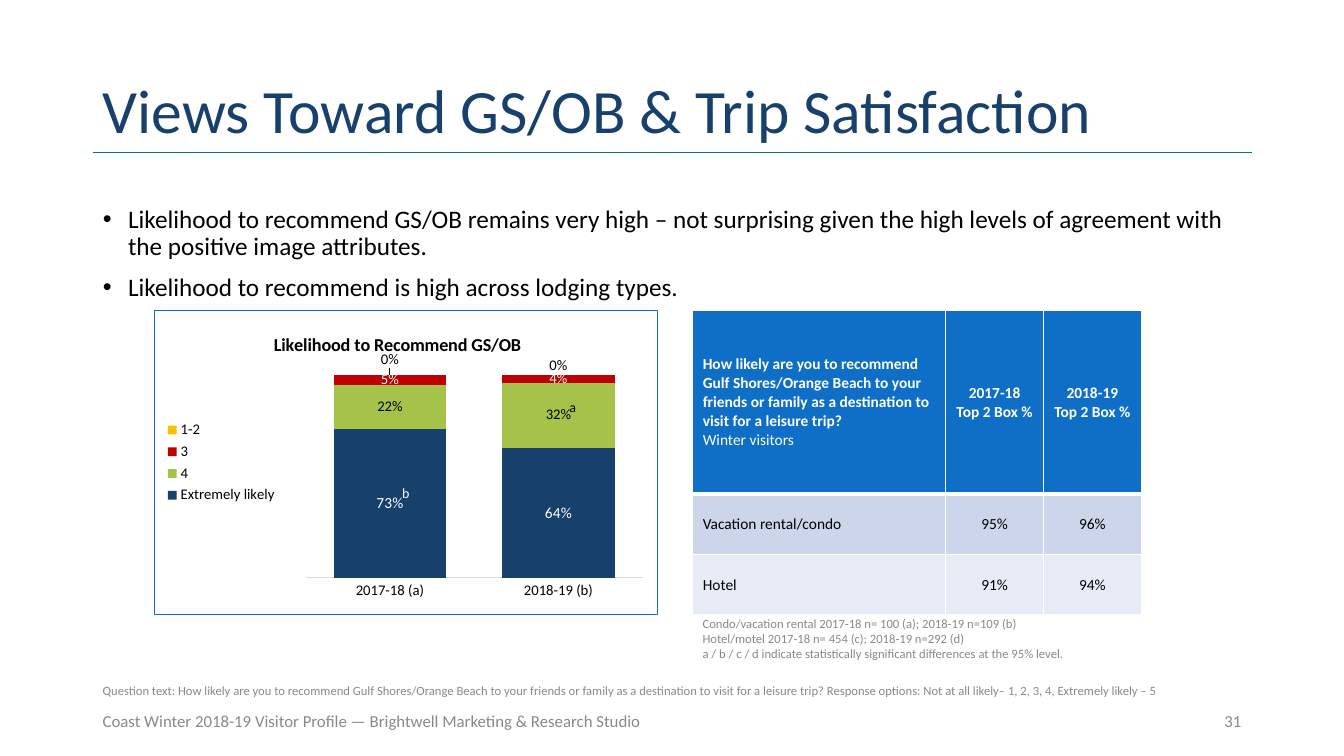
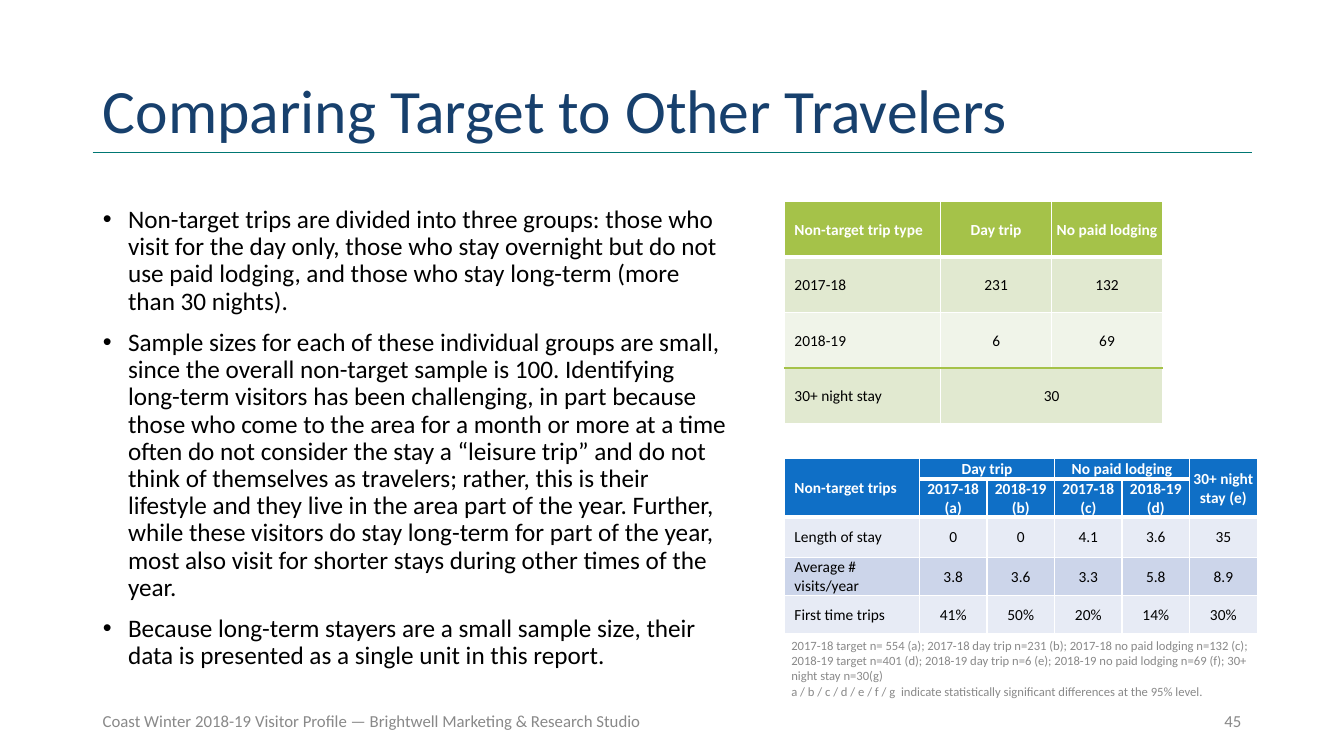
from lxml import etree
from pptx import Presentation
from pptx import util as u
from pptx.chart import data as cd
from pptx.dml.color import RGBColor
from pptx.enum import chart as ch, shapes, text as t
from pptx.oxml import parse_xml
from pptx.oxml.ns import nsdecls, qn

NAVY = RGBColor(0x17, 0x40, 0x6D)
BLUE = RGBColor(0x0F, 0x6F, 0xC6)
TEAL = RGBColor(0x00, 0x77, 0x73)
GREEN = RGBColor(0xA5, 0xC2, 0x49)
RED = RGBColor(0xC0, 0x00, 0x00)
GOLD = RGBColor(0xFF, 0xC0, 0x00)
BLACK = RGBColor(0, 0, 0)
WHITE = RGBColor(0xFF, 0xFF, 0xFF)
GREY = RGBColor(0x89, 0x89, 0x89)
RULE = RGBColor(0xD9, 0xD9, 0xD9)
ICE = RGBColor(0xE7, 0xEB, 0xF5)
SKY = RGBColor(0xCC, 0xD5, 0xEA)
SAGE = RGBColor(0xE1, 0xE9, 0xD0)
MINT = RGBColor(0xF0, 0xF4, 0xE9)
FONT = "Calibri"
LEFT, CENTER, RIGHT = t.PP_ALIGN.LEFT, t.PP_ALIGN.CENTER, t.PP_ALIGN.RIGHT
FOOTER = "Coast Winter 2018-19 Visitor Profile — Brightwell Marketing & Research Studio"


def write(frame, lines, size, color, bold=False, align=LEFT):
    """Fill a text frame, one paragraph a line."""
    frame.word_wrap = True
    for i, line in enumerate(lines):
        para = frame.paragraphs[0] if i == 0 else frame.add_paragraph()
        para.alignment = align
        run = para.add_run()
        run.text = line
        run.font.name, run.font.size = FONT, u.Pt(size)
        run.font.bold, run.font.color.rgb = bold, color


def grid(slide, left, top, cols, rows, cells, heads, fills, merges=(), rule=None):
    """Add a table; fills holds the header fill, then the two band fills."""
    frame = slide.shapes.add_table(len(rows), len(cols), u.Inches(left), u.Inches(top),
                                   u.Inches(sum(cols)), u.Inches(sum(rows)))
    table = frame.table
    for col, width in zip(table.columns, cols):
        col.width = u.Inches(width)
    for r, height in enumerate(rows):
        table.rows[r].height = u.Inches(height)
        head = r < heads
        for c, label in enumerate(cells[r]):
            cell = table.cell(r, c)
            cell.margin_left = u.Inches(0.01 if c else 0.1)
            cell.margin_right = cell.margin_top = u.Inches(0.01)
            cell.margin_bottom = 0
            cell.vertical_anchor = t.MSO_ANCHOR.MIDDLE
            props = cell._tc.get_or_add_tcPr()
            for side in "LRTB":
                width = 3 if head and side == "B" else 1
                ruled = rule is not None and (r, side) in ((rule, "T"), (rule - 1, "B"))
                props.append(parse_xml(
                    f'<a:ln{side} {nsdecls("a")} w="{u.Pt(width)}"><a:solidFill>'
                    f'<a:srgbClr val="{GREEN if ruled else WHITE}"/></a:solidFill></a:ln{side}>'))
            cell.fill.solid()
            cell.fill.fore_color.rgb = fills[0] if head else fills[1 + (r - heads) % 2]
            write(cell.text_frame, label.split("\n"), 11, WHITE if head else BLACK,
                  head, CENTER if c else LEFT)
    for r, c, last, end in merges:
        table.cell(r, c).merge(table.cell(last, end))
    return table


# Content: title, page, body height and width, bullets, notes (place, lines, size, colour)
pages = [
    ("Views Toward GS/OB & Trip Satisfaction", "31", 11.5, 1.66,
     ["Likelihood to recommend GS/OB remains very high – not surprising given the high levels "
      "of agreement with the positive image attributes.",
      "Likelihood to recommend is high across lodging types."],
     [((6.87, 6.06, 5, 0.56),
       ["Condo/vacation rental 2017-18 n= 100 (a); 2018-19 n=109 (b)",
        "Hotel/motel 2017-18 n= 454 (c); 2018-19 n=292 (d)",
        "a / b / c / d indicate statistically significant differences at the 95% level."], 9, GREY),
      ((0.92, 6.73, 10.95, 0.25),
       ["Question text: How likely are you to recommend Gulf Shores/Orange Beach to your friends "
        "or family as a destination to visit for a leisure trip? Response options: "
        "Not at all likely– 1, 2, 3, 4, Extremely likely – 5"], 9, GREY),
      ((5.55, 3.9, 0.27, 0.27), ["a"], 10, BLACK),
      ((3.89, 4.76, 0.28, 0.27), ["b"], 10, WHITE)]),
    ("Comparing Target to Other Travelers", "45", 6.42, 4.76,
     ["Non-target trips are divided into three groups: those who visit for the day only, those "
      "who stay overnight but do not use paid lodging, and those who stay long-term (more than "
      "30 nights).",
      "Sample sizes for each of these individual groups are small, since the overall non-target "
      "sample is 100. Identifying long-term visitors has been challenging, in part because those "
      "who come to the area for a month or more at a time often do not consider the stay a "
      "“leisure trip” and do not think of themselves as travelers; rather, this is their "
      "lifestyle and they live in the area part of the year. Further, while these visitors do "
      "stay long-term for part of the year, most also visit for shorter stays during other times "
      "of the year.",
      "Because long-term stayers are a small sample size, their data is presented as a single "
      "unit in this report."],
     [((7.75, 6.28, 4.78, 0.71),
       ["2017-18 target n= 554 (a); 2017-18 day trip n=231 (b); 2017-18 no paid lodging n=132 (c); "
        "2018-19 target n=401 (d); 2018-19 day trip n=6 (e); 2018-19 no paid lodging n=69 (f); "
        "30+ night stay n=30(g)",
        "a / b / c / d / e / f / g  indicate statistically significant differences at the 95% "
        "level."], 9, GREY)]),
]

deck = Presentation()
deck.slide_width, deck.slide_height = u.Inches(13.33), u.Inches(7.5)
slides = []

# Shared frame: title, rule, bullets, footer
for name, page, wide, high, points, notes in pages:
    slide = deck.slides.add_slide(deck.slide_layouts[1])
    slides.append(slide)
    title, body = slide.placeholders[0], slide.placeholders[1]
    for holder, box in ((title, (0.92, 0.4, 11.5, 1.45)), (body, (0.92, 2, wide, high))):
        holder.left, holder.top, holder.width, holder.height = map(u.Inches, box)
        holder.text_frame.auto_size = t.MSO_AUTO_SIZE.NONE
    title.text_frame.vertical_anchor = t.MSO_ANCHOR.MIDDLE
    write(title.text_frame, [name], 44, NAVY)
    title.text_frame.paragraphs[0].line_spacing = 0.9
    write(body.text_frame, points, 18, BLACK)
    for para in body.text_frame.paragraphs:
        para.line_spacing, para.space_before = 0.9, u.Pt(10)
        props = para._p.get_or_add_pPr()
        props.set("marL", str(u.Inches(0.25)))
        props.set("indent", str(u.Inches(-0.25)))

    line = slide.shapes.add_connector(shapes.MSO_CONNECTOR.STRAIGHT, u.Inches(0.92),
                                      u.Inches(1.51), u.Inches(12.42), u.Inches(1.51))
    line.line.color.rgb, line.line.width = TEAL, u.Pt(0.5)
    etree.SubElement(line._element.spPr, qn("a:effectLst"))

    for box, label, align in (((0.92, 6.95, 9.76, 0.4), FOOTER, LEFT),
                              ((10.79, 6.95, 1.62, 0.4), page, RIGHT)):
        foot = slide.shapes.add_textbox(*map(u.Inches, box)).text_frame
        foot.vertical_anchor = t.MSO_ANCHOR.MIDDLE
        write(foot, [label], 12, GREY, align=align)

# Slide 1: stacked chart
first, second = slides
data = cd.CategoryChartData(number_format="0%")
data.categories = ["2017-18 (a)", "2018-19 (b)"]
bars = [("Extremely likely", (0.73, 0.64), NAVY, WHITE, 11), ("4", (0.22, 0.32), GREEN, BLACK, 10.5),
        ("3", (0.05, 0.04), RED, WHITE, 10.5), ("1-2", (0, 0), GOLD, BLACK, 10.5)]
for name, vals, *_ in bars:
    data.add_series(name, vals)
chart = first.shapes.add_chart(ch.XL_CHART_TYPE.COLUMN_STACKED_100, u.Inches(1.53), u.Inches(3.08),
                               u.Inches(5), u.Inches(3.02), data).chart
chart.font.name, chart.font.size, chart.font.color.rgb = FONT, u.Pt(10), BLACK
chart.has_title = True
write(chart.chart_title.text_frame, ["Likelihood to Recommend GS/OB"], 13, BLACK, True, CENTER)
chart.has_legend = True
chart.legend.position = ch.XL_LEGEND_POSITION.LEFT
chart.legend.include_in_layout = False
cats, scale = chart.category_axis, chart.value_axis
for font in (chart.legend.font, cats.tick_labels.font):
    font.name, font.size, font.color.rgb = FONT, u.Pt(10.5), BLACK
cats.major_tick_mark = ch.XL_TICK_MARK.NONE
cats.format.line.color.rgb, cats.format.line.width = RULE, u.Pt(0.75)
scale.visible = scale.has_major_gridlines = False
scale.maximum_scale = 1
plot = chart.plots[0]
plot.gap_width, plot.overlap, plot.vary_by_categories = 50, 100, False
for bar, (_, _, fill, ink, size) in zip(plot.series, bars):
    bar.format.fill.solid()
    bar.format.fill.fore_color.rgb = fill
    tags = bar.data_labels
    tags.show_value, tags.position = True, ch.XL_LABEL_POSITION.CENTER
    tags.number_format, tags.number_format_is_linked = "0%", False
    tags.font.name, tags.font.size, tags.font.color.rgb = FONT, u.Pt(size), ink

# Lift the zero labels above the bars
for i, rise in enumerate((-0.05, -0.03)):
    tag = plot.series[3].points[i].data_label
    tag.font.name, tag.font.size, tag.font.color.rgb = FONT, u.Pt(10.5), BLACK
    tag.position = ch.XL_LABEL_POSITION.CENTER
    node = plot.series[3].data_labels._element.findall(qn("c:dLbl"))[i]
    node.insert(1, parse_xml(f'<c:layout {nsdecls("c")}><c:manualLayout><c:x val="0"/>'
                             f'<c:y val="{rise}"/></c:manualLayout></c:layout>'))

# Place the title and plot area, and frame the chart
root = chart._chartSpace
area = root.find(qn("c:chart"))
edges = '<c:xMode val="edge"/><c:yMode val="edge"/>'
spots = [("c:title", edges + '<c:x val="0.23"/><c:y val="0.06"/>'),
         ("c:plotArea", '<c:layoutTarget val="inner"/>' + edges + '<c:x val="0.3"/>'
          '<c:y val="0.21"/><c:w val="0.67"/><c:h val="0.67"/>')]
for kind, spot in spots:
    part = area.find(qn(kind))
    for old in part.findall(qn("c:layout")):
        part.remove(old)
    part.insert(1 if kind == "c:title" else 0, parse_xml(
        f'<c:layout {nsdecls("c")}><c:manualLayout>{spot}</c:manualLayout></c:layout>'))
area.addnext(parse_xml(
    f'<c:spPr {nsdecls("c", "a")}><a:solidFill><a:srgbClr val="{WHITE}"/></a:solidFill>'
    f'<a:ln w="{u.Pt(0.75)}"><a:solidFill><a:srgbClr val="{BLUE}"/></a:solidFill></a:ln></c:spPr>'))

# Slide 1: table by lodging type
table = grid(first, 6.87, 3.08, [2.51, 0.97, 0.97], [1.82, 0.6, 0.6],
             [["How likely are you to recommend Gulf Shores/Orange Beach to your friends or family "
               "as a destination to visit for a leisure trip?\nWinter visitors",
               "2017-18\nTop 2 Box %", "2018-19\nTop 2 Box %"],
              ["Vacation rental/condo", "95%", "96%"], ["Hotel", "91%", "94%"]],
             1, (BLUE, SKY, ICE))
table.cell(0, 0).text_frame.paragraphs[1].runs[0].font.bold = False

# Slide 2: sample sizes and trip details
grid(second, 7.78, 2, [1.55, 1.1, 1.1], [0.55] * 4,
     [["Non-target trip type", "Day trip", "No paid lodging"], ["2017-18", "231", "132"],
      ["2018-19", "6", "69"], ["30+ night stay", "30", ""]],
     1, (GREEN, SAGE, MINT), [(3, 1, 3, 2)], rule=3)
grid(second, 7.78, 4.55, [1.34] + [0.67] * 5, [0.2, 0.37, 0.4, 0.38, 0.38],
     [["Non-target trips", "Day trip", "", "No paid lodging", "", "30+ night stay (e)"],
      ["", "2017-18 (a)", "2018-19 (b)", "2017-18 (c)", "2018-19 (d)", ""],
      ["Length of stay", "0", "0", "4.1", "3.6", "35"],
      ["Average # visits/year", "3.8", "3.6", "3.3", "5.8", "8.9"],
      ["First time trips", "41%", "50%", "20%", "14%", "30%"]],
     2, (BLUE, ICE, SKY), [(0, 0, 1, 0), (0, 1, 0, 2), (0, 3, 0, 4), (0, 5, 1, 5)])

# Notes and significance marks, on top
for slide, entry in zip(slides, pages):
    for box, lines, size, ink in entry[-1]:
        write(slide.shapes.add_textbox(*map(u.Inches, box)).text_frame, lines, size, ink)

deck.save("out.pptx")
